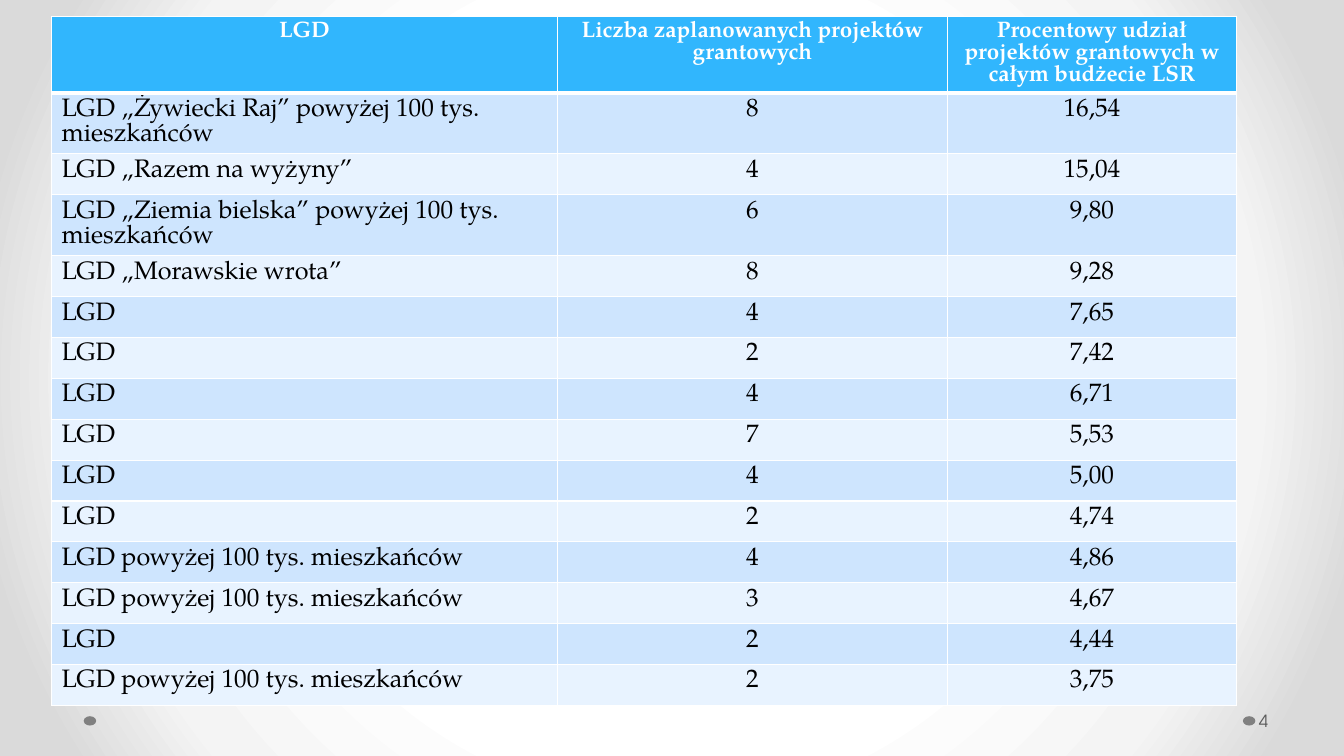
import pptx
import pptx.dml.color
import pptx.enum.shapes
import pptx.enum.text
import pptx.oxml
import pptx.oxml.ns
import pptx.util

Pt = pptx.util.Pt
RGB = pptx.dml.color.RGBColor.from_string
ALIGN = pptx.enum.text.PP_ALIGN
ANCHOR = pptx.enum.text.MSO_ANCHOR

HEADER = (
    "LGD",
    "Liczba zaplanowanych projektów grantowych",
    "Procentowy udział projektów grantowych w całym budżecie LSR",
)
ROWS = [
    ("LGD „Żywiecki Raj” powyżej 100 tys. mieszkańców", "8", "16,54"),
    ("LGD „Razem na wyżyny”", "4", "15,04"),
    ("LGD „Ziemia bielska” powyżej 100 tys. mieszkańców", "6", "9,80"),
    ("LGD „Morawskie wrota”", "8", "9,28"),
    ("LGD", "4", "7,65"),
    ("LGD", "2", "7,42"),
    ("LGD", "4", "6,71"),
    ("LGD", "7", "5,53"),
    ("LGD", "4", "5,00"),
    ("LGD", "2", "4,74"),
    ("LGD powyżej 100 tys. mieszkańców", "4", "4,86"),
    ("LGD powyżej 100 tys. mieszkańców", "3", "4,67"),
    ("LGD", "2", "4,44"),
    ("LGD powyżej 100 tys. mieszkańców", "2", "3,75"),
]
PAGE_NUMBER = "4"

THEME = {
    "table_font": "TeX Gyre Pagella",
    "number_font": "TeX Gyre Adventor",
    "header_size": 16,
    "body_size": 18,
    "number_size": 12,
    "header_leading": 15.7,
    "body_leading": 18.2,
    "header_fill": "31B6FD",
    "bands": ("CEE5FE", "E8F3FF"),
    "header_text": "FFFFFF",
    "body_text": "000000",
    "number_text": "595959",
    "border": "FFFFFF",
    "dot": "808080",
    "backdrop": ((0, "FFFFFF"), (50, "FFFFFF"), (76, "F4F4F4"), (92, "DADADA"), (100, "DADADA")),
}

SLIDE_W, SLIDE_H = 960, 540
TABLE_LEFT, TABLE_TOP = 36.8, 11.9
COLUMN_WIDTHS = (361.4, 278.6, 206.4)
HEADER_H, TALL_H, ROW_H = 54.3, 43.2, 29.2
LONG_NAME = 40
DOT_LEFTS, DOT_TOP, DOT_W, DOT_H = (59.8, 887.8), 511.6, 8.9, 6.7


def set_backdrop(s):
    s.background.fill.solid()
    solid = s._element.find(".//" + pptx.oxml.ns.qn("a:solidFill"))
    stops = "".join(
        f'<a:gs pos="{pos * 1000}"><a:srgbClr val="{color}"/></a:gs>'
        for pos, color in THEME["backdrop"]
    )
    gradient = pptx.oxml.parse_xml(
        f'<a:gradFill {pptx.oxml.ns.nsdecls("a")} rotWithShape="1"><a:gsLst>{stops}</a:gsLst>'
        '<a:path path="circle"><a:fillToRect l="50000" t="50000" r="50000" b="50000"/></a:path>'
        "</a:gradFill>"
    )
    solid.getparent().replace(solid, gradient)


def set_borders(cell, row):
    widths = {"L": 1, "R": 1, "T": 3 if row == 1 else 1, "B": 3 if row == 0 else 1}
    props = cell._tc.get_or_add_tcPr()
    for side, width in widths.items():
        props.append(pptx.oxml.parse_xml(
            f'<a:ln{side} {pptx.oxml.ns.nsdecls("a")} w="{Pt(width)}"><a:solidFill>'
            f'<a:srgbClr val="{THEME["border"]}"/></a:solidFill></a:ln{side}>'
        ))


def style_paragraph(p, font, size, color, bold=False):
    p.font.name = font
    p.font.size = Pt(size)
    p.font.color.rgb = RGB(color)
    p.font.bold = bold


def fill_cell(cell, text, row, col):
    kind = "body" if row else "header"
    set_borders(cell, row)
    cell.fill.solid()
    cell.fill.fore_color.rgb = RGB(THEME["bands"][(row - 1) % 2] if row else THEME["header_fill"])
    cell.text = text
    p = cell.text_frame.paragraphs[0]
    p.alignment = ALIGN.LEFT if row and col == 0 else ALIGN.CENTER
    p.line_spacing = Pt(THEME[kind + "_leading"])
    style_paragraph(p, THEME["table_font"], THEME[kind + "_size"], THEME[kind + "_text"], row == 0)


def add_grant_table(s):
    heights = [HEADER_H] + [TALL_H if len(name) > LONG_NAME else ROW_H for name, *_ in ROWS]
    table = s.shapes.add_table(
        len(heights), len(COLUMN_WIDTHS), Pt(TABLE_LEFT), Pt(TABLE_TOP),
        Pt(sum(COLUMN_WIDTHS)), Pt(sum(heights)),
    ).table
    for column, width in zip(table.columns, COLUMN_WIDTHS):
        column.width = Pt(width)
    for row, (texts, height) in enumerate(zip([HEADER] + ROWS, heights)):
        table.rows[row].height = Pt(height)
        for col, text in enumerate(texts):
            fill_cell(table.cell(row, col), text, row, col)


def add_footer(s):
    for left in DOT_LEFTS:
        dot = s.shapes.add_shape(
            pptx.enum.shapes.MSO_SHAPE.OVAL, Pt(left), Pt(DOT_TOP), Pt(DOT_W), Pt(DOT_H)
        )
        dot.shadow.inherit = False
        dot.fill.solid()
        dot.fill.fore_color.rgb = RGB(THEME["dot"])
        dot.line.fill.background()
    tf = s.shapes.add_textbox(Pt(897), Pt(500.4), Pt(59), Pt(28.8)).text_frame
    tf.word_wrap = True
    tf.vertical_anchor = ANCHOR.MIDDLE
    tf.margin_left = Pt(2.2)
    tf.margin_right = Pt(3.6)
    tf.text = PAGE_NUMBER
    style_paragraph(
        tf.paragraphs[0], THEME["number_font"], THEME["number_size"], THEME["number_text"]
    )


def main():
    prs = pptx.Presentation()
    prs.slide_width, prs.slide_height = Pt(SLIDE_W), Pt(SLIDE_H)
    s = prs.slides.add_slide(prs.slide_layouts[6])
    set_backdrop(s)
    add_grant_table(s)
    add_footer(s)
    prs.save("out.pptx")


if __name__ == "__main__":
    main()
